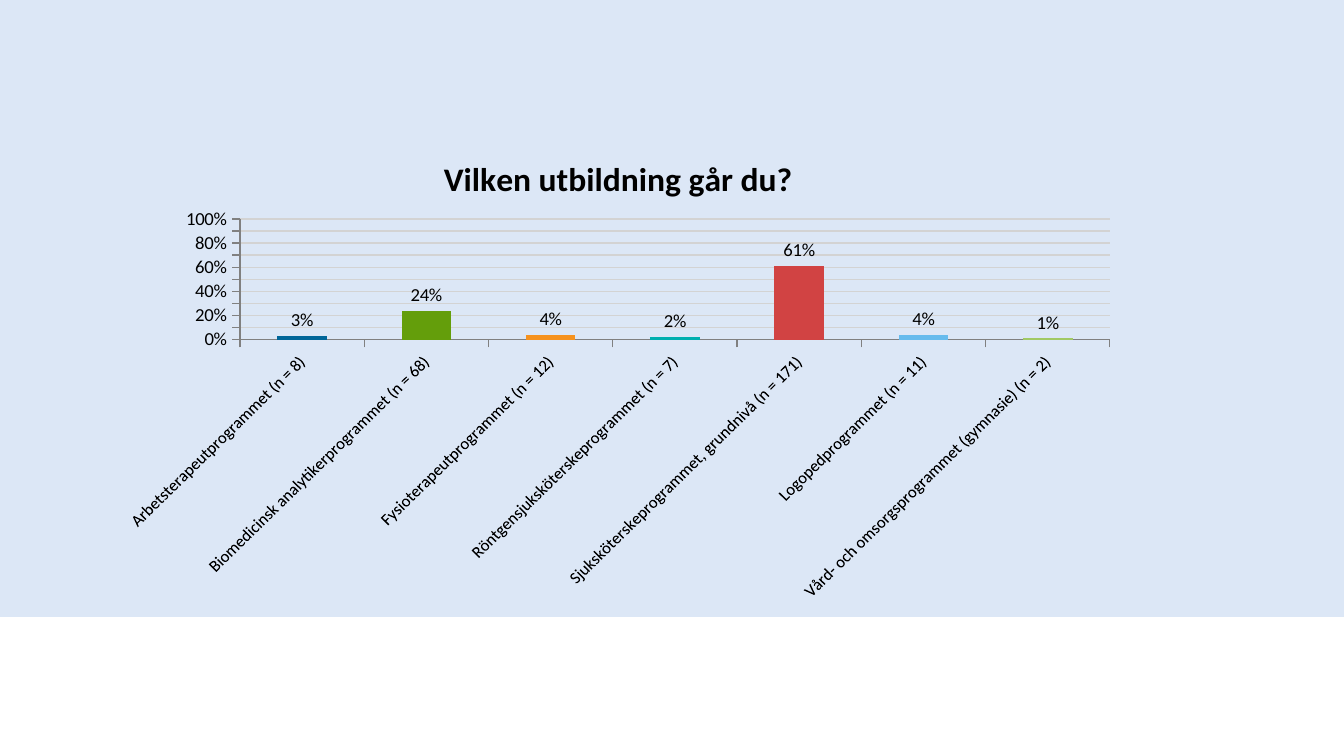
from pptx import Presentation
from pptx.chart.data import CategoryChartData
from pptx.dml.color import RGBColor
from pptx.enum.chart import XL_CHART_TYPE, XL_LABEL_POSITION, XL_TICK_MARK
from pptx.enum.shapes import MSO_SHAPE
from pptx.oxml.ns import qn
from pptx.util import Inches, Pt

HUES = {"panel": "DCE7F6", "text": "000000", "grid": "D3D3D3", "axis": "808080"}
BARS = [
    ("Arbetsterapeutprogrammet (n = 8)", 0.03, "006699"),
    ("Biomedicinsk analytikerprogrammet (n = 68)", 0.24, "649E0B"),
    ("Fysioterapeutprogrammet (n = 12)", 0.04, "F6921E"),
    ("Röntgensjuksköterskeprogrammet (n = 7)", 0.02, "00AFAF"),
    ("Sjuksköterskeprogrammet, grundnivå (n = 171)", 0.61, "D14343"),
    ("Logopedprogrammet (n = 11)", 0.04, "66BBED"),
    ("Vård- och omsorgsprogrammet (gymnasie) (n = 2)", 0.01, "A1C964"),
]


def paint(fill, hue):
    fill.solid()
    fill.fore_color.rgb = RGBColor.from_string(hue)


def style(font, size, bold=False):
    font.name = "Calibri"
    font.size = Pt(size)
    font.bold = bold
    font.color.rgb = RGBColor.from_string(HUES["text"])


prs = Presentation()
prs.slide_width = Inches(10)
prs.slide_height = Inches(10 * 9 / 16)
slide = prs.slides.add_slide(prs.slide_layouts[6])

panel = slide.shapes.add_shape(MSO_SHAPE.RECTANGLE, 0, 0, Inches(10), Inches(4.59))
panel.shadow.inherit = False
paint(panel.fill, HUES["panel"])
panel.line.fill.background()

data = CategoryChartData(number_format="0%")
data.categories = [name for name, _, _ in BARS]
data.add_series("Series 1", [share for _, share, _ in BARS])
chart = slide.shapes.add_chart(
    XL_CHART_TYPE.COLUMN_CLUSTERED,
    Inches(0.79), Inches(1), Inches(7.62), Inches(3.47), data,
).chart
style(chart.font, 18)
chart.has_legend = False
chart.has_title = True
title = chart.chart_title.text_frame
title.text = "Vilken utbildning går du?"
style(title.paragraphs[0].font, 18, bold=True)
chart.chart_title.include_in_layout = False

# Axes
for axis, size in ((chart.category_axis, 9), (chart.value_axis, 10)):
    axis.major_tick_mark = XL_TICK_MARK.OUTSIDE
    axis.minor_tick_mark = XL_TICK_MARK.NONE
    style(axis.tick_labels.font, size)
    paint(axis.format.line.fill, HUES["axis"])
    axis.format.line.width = Pt(0.75)

turn = chart.category_axis._element.find(qn("c:txPr")).find(qn("a:bodyPr"))
turn.set("rot", "-2700000")
turn.set("vert", "horz")

scale = chart.value_axis
scale.minimum_scale, scale.maximum_scale = 0, 1
scale.major_unit = 0.1
scale.tick_labels.number_format = "0%"
scale.tick_labels.number_format_is_linked = False
scale.has_major_gridlines = True
grid = scale.major_gridlines.format.line
paint(grid.fill, HUES["grid"])
grid.width = Pt(0.75)

# Bars
plot = chart.plots[0]
plot.gap_width = 150
plot.vary_by_categories = False
series = plot.series[0]
series.invert_if_negative = False
paint(series.format.fill, BARS[0][2])
for i, (_, _, hue) in enumerate(BARS[1:], 1):
    paint(series.points[i].format.fill, hue)

labels = series.data_labels
labels.show_value = True
labels.position = XL_LABEL_POSITION.OUTSIDE_END
labels.number_format = "0%"
labels.number_format_is_linked = False
style(labels.font, 10)

prs.save("out.pptx")
